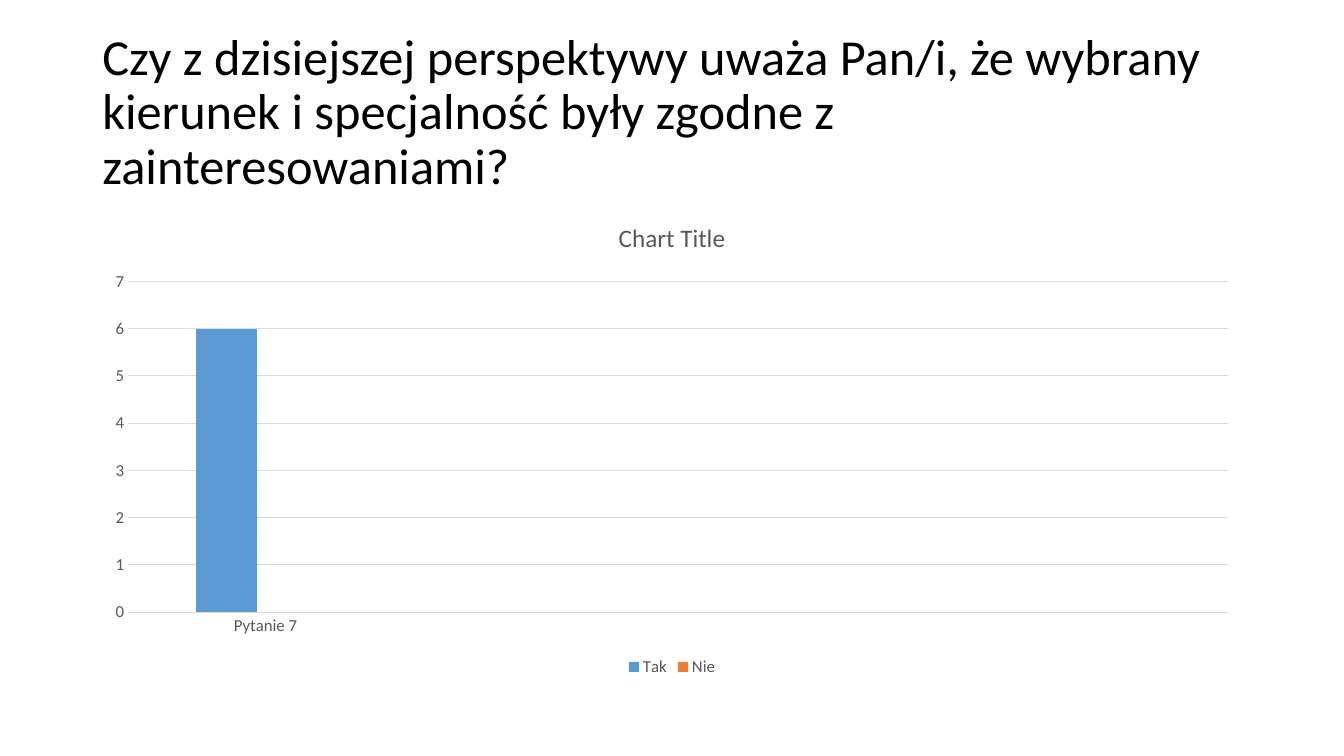
from dataclasses import dataclass

from pptx import Presentation
from pptx.chart.data import CategoryChartData
from pptx.dml.color import RGBColor
from pptx.enum.chart import XL_CHART_TYPE, XL_LEGEND_POSITION, XL_TICK_MARK
from pptx.enum.text import MSO_ANCHOR
from pptx.util import Pt

COLUMN = XL_CHART_TYPE.COLUMN_CLUSTERED
BOTTOM = XL_LEGEND_POSITION.BOTTOM
NO_TICK = XL_TICK_MARK.NONE
MIDDLE = MSO_ANCHOR.MIDDLE


@dataclass(frozen=True)
class Theme:
    font: str = "Calibri"
    ink: str = "000000"
    grey: str = "595959"
    grid: str = "D9D9D9"
    fills: tuple = ("5B9BD5", "ED7D31")
    head: int = 36
    title: int = 18
    label: int = 12


THEME = Theme()
LEFT, WIDTH = 66, 828  # shared column of heading and chart


def style(font, size, color):
    font.name = THEME.font
    font.size = Pt(size)
    font.bold = False
    font.color.rgb = RGBColor.from_string(color)


def rule(line):
    line.color.rgb = RGBColor.from_string(THEME.grid)
    line.width = Pt(0.75)


def add_text(slide, text, *, box, size, color, spacing=1.0, anchor=MIDDLE):
    frame = slide.shapes.add_textbox(*map(Pt, box)).text_frame
    frame.word_wrap = True
    frame.vertical_anchor = anchor
    para = frame.paragraphs[0]
    para.line_spacing = spacing
    run = para.add_run()
    run.text = text
    style(run.font, size, color)


def add_bars(slide, title, names, series, *, box):
    data = CategoryChartData()
    data.categories = names
    for name, values in series.items():
        data.add_series(name, values)
    chart = slide.shapes.add_chart(COLUMN, *map(Pt, box), data).chart
    style(chart.font, THEME.label, THEME.grey)

    # Title and legend
    chart.has_title = True
    frame = chart.chart_title.text_frame
    frame.text = title
    style(frame.paragraphs[0].runs[0].font, THEME.title, THEME.grey)
    chart.chart_title.include_in_layout = False
    chart.has_legend = True
    chart.legend.position = BOTTOM
    chart.legend.include_in_layout = False
    style(chart.legend.font, THEME.label, THEME.grey)

    # Axes
    for axis in (chart.category_axis, chart.value_axis):
        axis.major_tick_mark = axis.minor_tick_mark = NO_TICK
        style(axis.tick_labels.font, THEME.label, THEME.grey)
    rule(chart.category_axis.format.line)
    chart.value_axis.format.line.fill.background()
    rule(chart.value_axis.major_gridlines.format.line)

    # Bars
    plot = chart.plots[0]
    plot.vary_by_categories = False
    plot.gap_width = 219
    plot.overlap = -27
    for bar, color in zip(plot.series, THEME.fills):
        bar.format.fill.solid()
        bar.format.fill.fore_color.rgb = RGBColor.from_string(color)


def main():
    deck = Presentation()
    deck.slide_width, deck.slide_height = Pt(960), Pt(540)
    slide = deck.slides.add_slide(deck.slide_layouts[6])

    # Heading
    add_text(
        slide,
        "Czy z dzisiejszej perspektywy uważa Pan/i, że wybrany kierunek "
        "i specjalność były zgodne z zainteresowaniami?",
        box=(LEFT, 28.75, WIDTH, 104.4),
        size=THEME.head, color=THEME.ink, spacing=0.9,
    )

    # Answers: only the first of four slots is filled
    blank = [None] * 3
    add_bars(
        slide,
        "Chart Title",
        ["Pytanie 7", "", "", ""],
        {"Tak": [6, *blank], "Nie": [0, *blank]},
        box=(LEFT, 143.75, WIDTH, 342.6),
    )
    deck.save("out.pptx")


if __name__ == "__main__":
    main()
